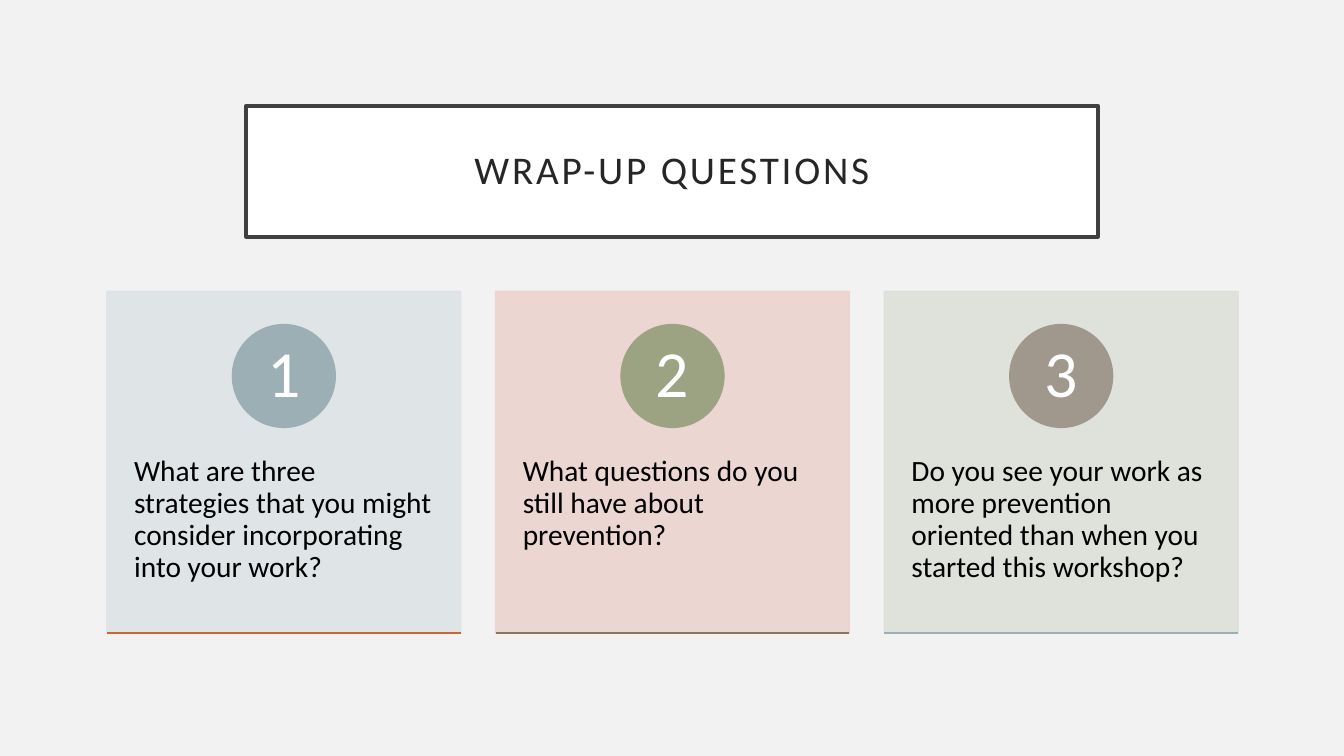
from lxml.etree import SubElement
from pptx import Presentation
from pptx.dml.color import RGBColor
from pptx.enum.shapes import MSO_CONNECTOR, MSO_SHAPE
from pptx.enum.text import MSO_ANCHOR, MSO_AUTO_SIZE, PP_ALIGN
from pptx.oxml.ns import qn
from pptx.util import Inches, Pt

PAPER = RGBColor(0xF2, 0xF2, 0xF2)
WHITE = RGBColor(0xFF, 0xFF, 0xFF)
BLACK = RGBColor(0, 0, 0)
FRAME = RGBColor(0x40, 0x40, 0x40)
INK = RGBColor(0x26, 0x26, 0x26)
MIST = RGBColor(0xDE, 0xE3, 0xE5)
BLUSH = RGBColor(0xEB, 0xD3, 0xCE)
SAGE = RGBColor(0xDE, 0xE0, 0xD9)
STEEL = RGBColor(0x9B, 0xAF, 0xB5)
OLIVE = RGBColor(0x9C, 0xA3, 0x83)
TAUPE = RGBColor(0xA0, 0x98, 0x8C)
RUST = RGBColor(0xC9, 0x67, 0x31)
UMBER = RGBColor(0x87, 0x79, 0x5D)

# question, card, badge, base line
CARDS = [
    ("What are three strategies that you might consider incorporating into your work?",
     MIST, STEEL, RUST),
    ("What questions do you still have about prevention?", BLUSH, OLIVE, UMBER),
    ("Do you see your work as more prevention oriented than when you started this workshop?",
     SAGE, TAUPE, STEEL),
]
LEFT, TOP, WIDTH, HEIGHT, PITCH = 1.06, 2.89, 3.51, 3.39, 3.855
BADGE = 1.02


def box(*sizes):
    return [Inches(size) for size in sizes]


def write(shape, text, size, color, align, anchor, pad_x, pad_y):
    """Put one Calibri paragraph in the shape; pads are inches."""
    frame = shape.text_frame
    form = dict(word_wrap=True, auto_size=MSO_AUTO_SIZE.NONE, vertical_anchor=anchor,
                margin_left=Inches(pad_x), margin_right=Inches(pad_x),
                margin_top=Inches(pad_y), margin_bottom=Inches(pad_y))
    for name, value in form.items():
        setattr(frame, name, value)
    para = frame.paragraphs[0]
    para.alignment = align
    para.line_spacing = 0.9
    run = para.add_run()
    run.text = text
    run.font.name = "Calibri"
    run.font.size = Pt(size)
    run.font.color.rgb = color
    return run


def paint(shape, fill, line, width):
    shape.fill.solid()
    shape.fill.fore_color.rgb = fill
    shape.line.color.rgb = line
    shape.line.width = Pt(width)


def fade(shape, percent):
    """Set the opacity of fill and line."""
    for color in shape._element.spPr.iter(qn("a:srgbClr")):
        SubElement(color, qn("a:alpha"), val=str(percent * 1000))


def add_block(slide, kind, color, *place):
    block = slide.shapes.add_shape(kind, *box(*place))
    block.shadow.inherit = False
    paint(block, color, color, 1)
    return block


def add_title(slide, left, top, width, height):
    title = slide.shapes.title
    title.left, title.top, title.width, title.height = box(left, top, width, height)
    paint(title, WHITE, FRAME, 2.5)
    run = write(title, "WRAP-UP QUESTIONS", 28, INK, PP_ALIGN.CENTER,
                MSO_ANCHOR.MIDDLE, 0.2, 0.2)
    run.font._element.set("spc", "200")


def add_card(slide, number, card, left, top, width, height):
    question, back, accent, base = card
    fade(add_block(slide, MSO_SHAPE.RECTANGLE, back, left, top, width, height), 90)

    body = slide.shapes.add_textbox(*box(left, top + 1.28, width, 2.04))
    write(body, question, 21, BLACK, PP_ALIGN.LEFT, MSO_ANCHOR.TOP, 0.27, 0.36)

    badge = add_block(slide, MSO_SHAPE.OVAL, accent,
                      left + (width - BADGE) / 2, top + 0.33, BADGE, BADGE)
    write(badge, str(number), 47, WHITE, PP_ALIGN.CENTER, MSO_ANCHOR.MIDDLE, 0.08, 0.01)

    foot = top + height
    rule = slide.shapes.add_connector(MSO_CONNECTOR.STRAIGHT,
                                      *box(left, foot, left + width, foot))
    rule.line.color.rgb = base
    rule.line.width = Pt(1)
    SubElement(rule._element.spPr, qn("a:effectLst"))


def main():
    deck = Presentation()
    deck.slide_width, deck.slide_height = box(13.33, 7.5)
    slide = deck.slides.add_slide(deck.slide_layouts[5])
    slide.background.fill.solid()
    slide.background.fill.fore_color.rgb = PAPER
    add_title(slide, 2.44, 1.05, 8.45, 1.3)
    for index, card in enumerate(CARDS):
        add_card(slide, index + 1, card, LEFT + index * PITCH, TOP, WIDTH, HEIGHT)
    deck.save("out.pptx")


if __name__ == "__main__":
    main()
